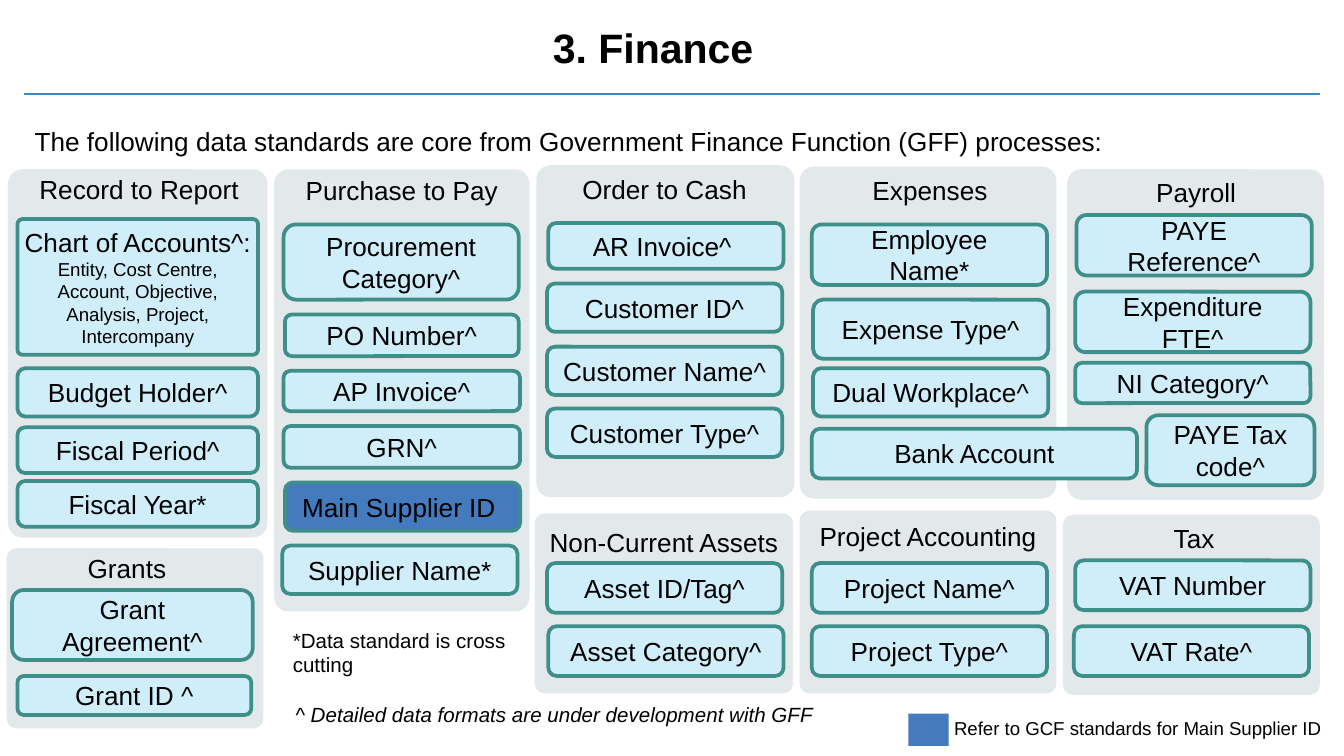
from lxml.etree import SubElement
from pptx import Presentation
from pptx.dml.color import RGBColor
from pptx.enum.shapes import MSO_CONNECTOR, MSO_SHAPE
from pptx.enum.text import MSO_ANCHOR, PP_ALIGN
from pptx.oxml.ns import qn
from pptx.util import Pt

PX = 9144  # 100 px to the inch
SLIDE_WIDTH = 1000
BLACK = RGBColor(0x00, 0x00, 0x00)
RULE_BLUE = RGBColor(0x3D, 0x85, 0xC6)
PANEL_GREY = RGBColor(0xE3, 0xE8, 0xEA)
PALE_BLUE = RGBColor(0xD0, 0xEE, 0xF9)
TEAL = RGBColor(0x3E, 0x8E, 0x8A)
SUPPLIER_BLUE = RGBColor(0x44, 0x7A, 0xBE)

HEADING_HEIGHT = 34
PANEL_ROUNDING, CARD_ROUNDING, CHART_ROUNDING = 0.056, 0.167, 0.037
SUPPLIER = "Main Supplier ID "

# heading: left, top, width; panel: left, top, width, height
# cards: text, left, top, height and, where it differs, width
PROCESSES = [
    {"heading": ("Record to Report", 19, 124, 169), "panel": (6, 126, 193, 274), "width": 179,
     "cards": [("Budget Holder^", 13, 274, 36), ("Fiscal Period^", 13, 318, 34),
               ("Fiscal Year*", 13, 358, 34)]},
    {"heading": ("Purchase to Pay", 213, 125, 172), "panel": (204, 126, 190, 329), "width": 175,
     "cards": [("Procurement Category^", 211, 167, 56), ("PO Number^", 212, 234, 31, 174),
               ("AP Invoice^", 211, 276, 30, 176), ("GRN^", 211, 317, 31, 176),
               (SUPPLIER, 212, 359, 36), ("Supplier Name*", 210, 406, 36)]},
    {"heading": ("Order to Cash", 423, 124, 143), "panel": (399, 123, 192, 247), "width": 175,
     "cards": [("AR Invoice^ ", 408, 166, 34), ("Customer ID^", 407, 211, 36),
               ("Customer Name^ ", 407, 258, 36), ("Customer Type^", 407, 304, 36)]},
    {"heading": ("Expenses", 635, 125, 114), "panel": (595, 124, 191, 247), "width": 175,
     "cards": [("Employee Name*", 604, 167, 45), ("Expense Type^", 605, 223, 44),
               ("Dual Workplace^", 605, 274, 36), ("Bank Account", 604, 319, 37, 242)]},
    {"heading": ("Payroll", 846, 126, 88), "panel": (794, 126, 191, 246), "width": 175,
     "cards": [("PAYE Reference^", 801, 160, 45), ("Expenditure FTE^", 800, 217, 45),
               ("NI Category^", 800, 270, 30), ("PAYE Tax code^", 853, 309, 52, 125)]},
    {"heading": ("Grants", 51, 406, 87), "panel": (5, 408, 191, 134), "width": 174,
     "cards": [("Grant Agreement^", 9, 439, 52, 179), ("Grant ID ^", 13, 503, 29)]},
    {"heading": ("Non-Current Assets", 398, 387, 192), "panel": (398, 382, 192, 134), "width": 175,
     "cards": [("Asset ID/Tag^", 407, 419, 37), ("Asset Category^", 408, 466, 37)]},
    {"heading": ("Project Accounting", 595, 382, 191), "panel": (595, 380, 191, 136), "width": 175,
     "cards": [("Project Name^", 604, 419, 37), ("Project Type^", 604, 466, 37)]},
    {"heading": ("Tax", 862, 384, 53), "panel": (791, 383, 191, 134), "width": 175,
     "cards": [("VAT Number", 800, 417, 37), ("VAT Rate^", 799, 466, 37)]},
]
CHART_OF_ACCOUNTS = [("Chart of Accounts^:", 14), ("Entity, Cost Centre,", 10),
                     ("Account, Objective,", 10), ("Analysis, Project,", 10),
                     ("Intercompany", 10)]
CHART_RECT = (13, 163, 179, 101)
TITLE = ("3. Finance", (20, 7, 932, 63))
INTRO = ("The following data standards are core from Government Finance Function (GFF) processes:",
         (16, 80, 964, 37))
NOTES = [  # text, points, place, font values
    ("*Data standard is cross cutting", 11, (208, 457, 179, 57), {}),
    ("^ Detailed data formats are under development with GFF", 11, (210, 513, 467, 39),
     {"italic": True}),
    ("Refer to GCF standards for Main Supplier ID", 10, (700, 525, 302, 37), {}),
]
KEY_RECT = (676, 531, 30, 24)


def emu(rect):
    return [value * PX for value in rect]


def write(shape, lines, margins=(10, 5), anchor=MSO_ANCHOR.TOP,
          align=PP_ALIGN.LEFT, wrap=True, spacing=None, **font):
    """Fill a shape with (text, points) lines; margins are horizontal, vertical px."""
    frame = shape.text_frame
    across, down = emu(margins)
    for name, value in {"margin_left": across, "margin_right": across, "margin_top": down,
                        "margin_bottom": down, "vertical_anchor": anchor,
                        "word_wrap": wrap}.items():
        setattr(frame, name, value)
    for index, (text, points) in enumerate(lines):
        para = frame.add_paragraph() if index else frame.paragraphs[0]
        para.alignment = align
        if spacing:
            para.line_spacing = spacing
        span = para.add_run()
        span.text = text
        span.font.color.rgb = BLACK
        for name, value in {"name": "Arial", "size": Pt(points), **font}.items():
            setattr(span.font, name, value)


def add_block(page, rect, fill, rounding=None, outline=None):
    kind = MSO_SHAPE.ROUNDED_RECTANGLE if rounding else MSO_SHAPE.RECTANGLE
    block = page.shapes.add_shape(kind, *emu(rect))
    block.shadow.inherit = False
    if rounding:
        block.adjustments[0] = rounding
    block.fill.solid()
    block.fill.fore_color.rgb = fill
    if outline:
        block.line.color.rgb = outline
        block.line.width = Pt(2)
    else:
        block.line.fill.background()
    return block


def add_text(page, rect, text, points, **layout):
    write(page.shapes.add_textbox(*emu(rect)), [(text, points)], **layout)


def add_card(page, rect, lines, fill=PALE_BLUE, rounding=CARD_ROUNDING, margins=(10, 5)):
    card = add_block(page, rect, fill, rounding, TEAL)
    write(card, lines, margins, MSO_ANCHOR.MIDDLE, PP_ALIGN.CENTER)


def add_header(page):
    rule = page.shapes.add_connector(MSO_CONNECTOR.STRAIGHT, *emu((18, 70, 982, 70)))
    rule.line.color.rgb = RULE_BLUE
    rule.line.width = Pt(1.5)
    SubElement(rule._element.spPr, qn("a:effectLst"))
    text, rect = TITLE
    add_text(page, rect, text, 22, margins=(10, 10), align=PP_ALIGN.CENTER, bold=True)
    text, rect = INTRO
    add_text(page, rect, text, 14, margins=(10, 10), spacing=1.15)


def add_processes(page):
    for process in PROCESSES:
        add_block(page, process["panel"], PANEL_GREY, PANEL_ROUNDING)
    for process in PROCESSES:
        heading, *place = process["heading"]
        add_text(page, (*place, HEADING_HEIGHT), heading, 14,
                 align=PP_ALIGN.CENTER, wrap=False)
        for text, left, top, height, *own_width in process["cards"]:
            width = own_width[0] if own_width else process["width"]
            fill = SUPPLIER_BLUE if text == SUPPLIER else PALE_BLUE
            margins = (4, 5) if text.startswith("AR") else (10, 5)
            add_card(page, (left, top, width, height), [(text, 14)], fill, margins=margins)
    add_card(page, CHART_RECT, CHART_OF_ACCOUNTS, rounding=CHART_ROUNDING, margins=(0, 5))


def add_notes(page):
    add_block(page, KEY_RECT, SUPPLIER_BLUE)
    for text, points, rect, font in NOTES:
        add_text(page, rect, text, points, margins=(10, 10), **font)


def main():
    deck = Presentation()
    deck.slide_width = SLIDE_WIDTH * PX
    deck.slide_height = deck.slide_width * 9 // 16
    page = deck.slides.add_slide(deck.slide_layouts[6])
    add_header(page)
    add_processes(page)
    add_notes(page)
    deck.save("out.pptx")


if __name__ == "__main__":
    main()
